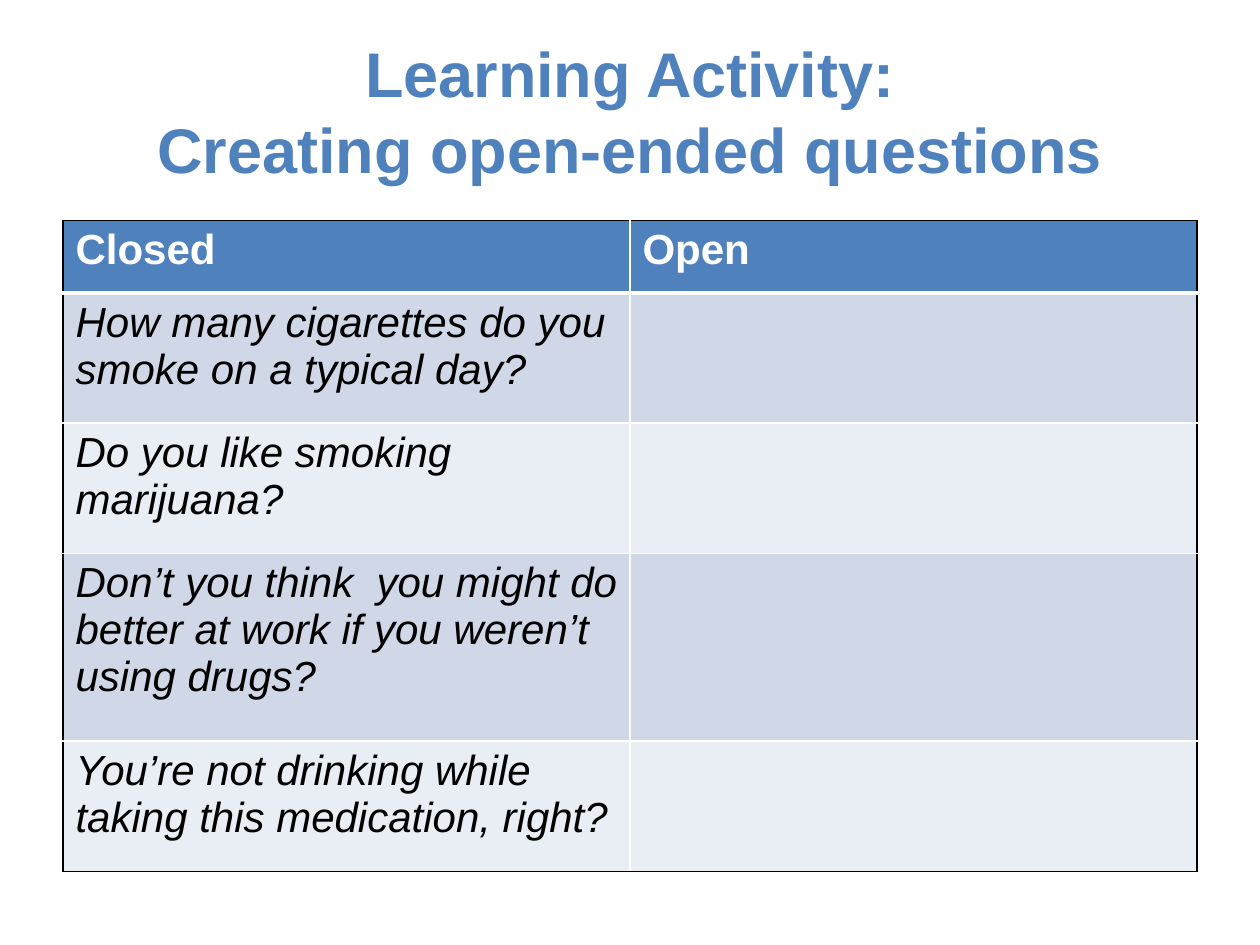
from dataclasses import dataclass

from lxml import etree
from pptx import Presentation
from pptx.dml.color import RGBColor
from pptx.enum.text import MSO_ANCHOR, PP_ALIGN
from pptx.oxml.ns import qn
from pptx.util import Pt

CENTER = PP_ALIGN.CENTER
MIDDLE = MSO_ANCHOR.MIDDLE


@dataclass(frozen=True)
class Theme:
    font: str = "Arial"
    title_size: int = 36
    cell_size: int = 24
    accent: str = "4F81BD"
    white: str = "FFFFFF"
    black: str = "000000"
    bands: tuple = ("D0D8E8", "E9EDF4")


THEME = Theme()
LEFT, WIDTH = 36, 648
ROW_HEIGHTS = (41.4, 74.4, 74.4, 107.4, 74.4)
ROWS = (
    ("Closed", "Open"),
    ("How many cigarettes do you smoke on a typical day?", ""),
    ("Do you like smoking marijuana?", ""),
    ("Don’t you think  you might do better at work if you weren’t using drugs?", ""),
    ("You’re not drinking while taking this medication, right?", ""),
)


def style_font(font, size, color, bold=False, italic=False):
    font.name = THEME.font
    font.size = Pt(size)
    font.bold = bold
    font.italic = italic
    font.color.rgb = RGBColor.from_string(color)


def add_title(slide, text):
    box = slide.shapes.add_textbox(Pt(LEFT), Pt(18), Pt(WIDTH), Pt(90))
    tf = box.text_frame
    tf.word_wrap = True
    tf.vertical_anchor = MIDDLE
    p = tf.paragraphs[0]
    p.text = text
    p.alignment = CENTER
    for r in p.runs:
        style_font(r.font, THEME.title_size, THEME.accent, bold=True)


def set_borders(cell, borders):
    tc_pr = cell._tc.get_or_add_tcPr()
    for i, (side, (color, width)) in enumerate(borders.items()):
        ln = etree.Element(qn(f"a:ln{side}"), w=str(Pt(width)))
        fill = etree.SubElement(ln, qn("a:solidFill"))
        etree.SubElement(fill, qn("a:srgbClr"), val=color)
        tc_pr.insert(i, ln)


def cell_borders(row, col):
    inner, outer = (THEME.white, 1), (THEME.black, 1)
    header_rule = (THEME.white, 3)
    last_row, last_col = len(ROWS) - 1, len(ROWS[0]) - 1
    top = {0: outer, 1: header_rule}.get(row, inner)
    bottom = {0: header_rule, last_row: outer}.get(row, inner)
    return {
        "L": outer if col == 0 else inner,
        "R": outer if col == last_col else inner,
        "T": top,
        "B": bottom,
    }


def fill_cell(cell, text, row, col):
    header = row == 0
    color = THEME.accent if header else THEME.bands[(row - 1) % 2]
    cell.fill.solid()
    cell.fill.fore_color.rgb = RGBColor.from_string(color)
    set_borders(cell, cell_borders(row, col))
    if text:
        cell.text_frame.text = text
        r = cell.text_frame.paragraphs[0].runs[0]
        text_color = THEME.white if header else THEME.black
        style_font(r.font, THEME.cell_size, text_color, header, not header)


def add_question_table(slide):
    cols = len(ROWS[0])
    frame = slide.shapes.add_table(
        len(ROWS), cols, Pt(LEFT), Pt(126), Pt(WIDTH), Pt(sum(ROW_HEIGHTS))
    )
    table = frame.table
    for column in table.columns:
        column.width = Pt(WIDTH / cols)
    for i, (height, texts) in enumerate(zip(ROW_HEIGHTS, ROWS)):
        table.rows[i].height = Pt(height)
        for j, text in enumerate(texts):
            fill_cell(table.cell(i, j), text, i, j)


def main():
    prs = Presentation()
    prs.slide_width, prs.slide_height = Pt(720), Pt(540)
    slide = prs.slides.add_slide(prs.slide_layouts[6])
    add_title(slide, "Learning Activity:\vCreating open-ended questions")
    add_question_table(slide)
    prs.save("out.pptx")


if __name__ == "__main__":
    main()
